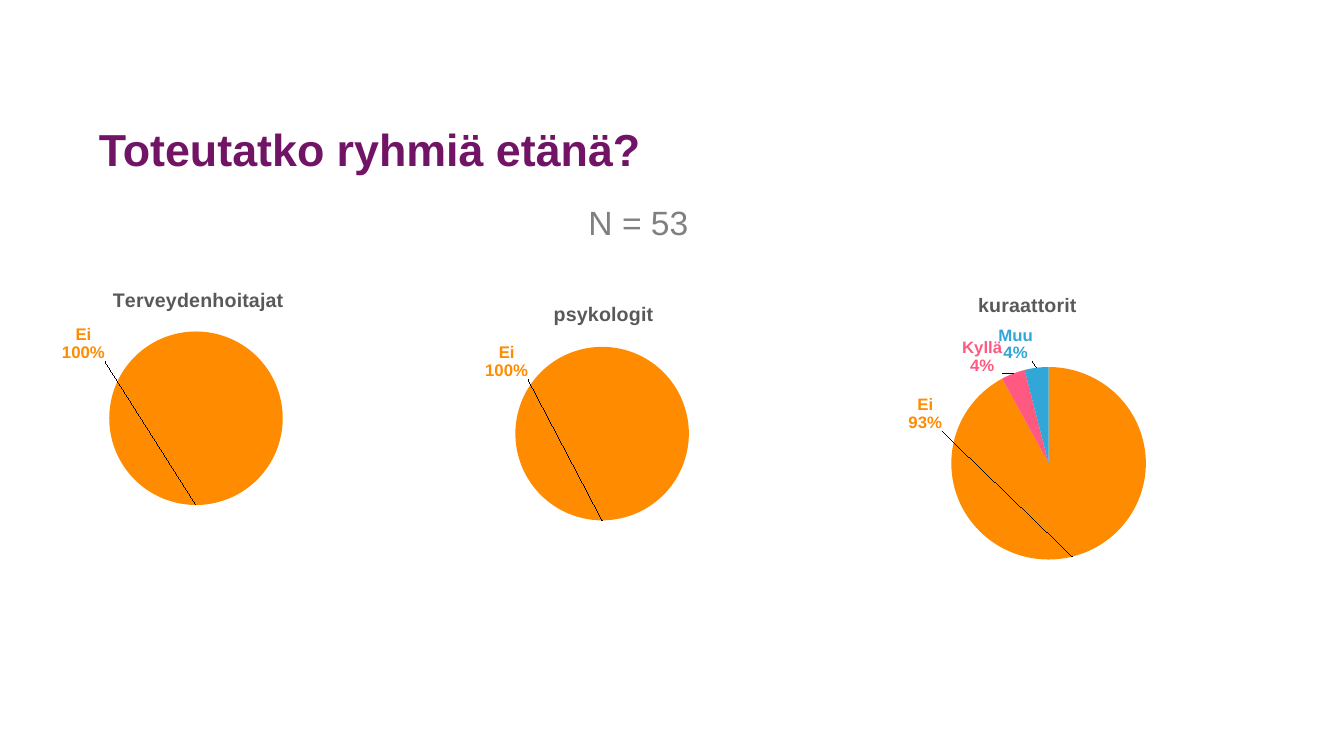
from lxml.etree import SubElement
from pptx import Presentation
from pptx.chart.data import CategoryChartData as ChartData
from pptx.dml.color import RGBColor
from pptx.enum.chart import XL_CHART_TYPE as ChartType, XL_LABEL_POSITION as LabelPos
from pptx.enum.text import MSO_ANCHOR as Anchor
from pptx.oxml.ns import qn
from pptx.util import Cm, Pt

PLUM = RGBColor(0x72, 0x14, 0x65)
GREY = RGBColor(0x80, 0x80, 0x80)
DARK = RGBColor(0x59, 0x59, 0x59)
BLACK = RGBColor(0, 0, 0)
ORANGE = RGBColor(0xFF, 0x8C, 0x00)
PINK = RGBColor(0xFF, 0x59, 0x82)
BLUE = RGBColor(0x31, 0xA7, 0xD7)

FONT = "Arial"
ANSWERS = {"Ei": ORANGE, "Kyllä": PINK, "Muu": BLUE}
TEXTS = [
    {"text": "Toteutatko ryhmiä etänä?", "box": (2.49, 2.54, 15.19, 2.57),
     "size": 32, "color": PLUM, "bold": True,
     "inset": 0, "anchor": Anchor.MIDDLE, "spacing": 0.9},
    {"text": "N = 53", "box": (14.58, 4.97, 6.2, 1.27),
     "size": 24, "color": GREY, "bold": False,
     "inset": 0.25, "anchor": Anchor.TOP, "spacing": 1},
]
PIES = [
    {"title": "Terveydenhoitajat", "values": (100, 0, 0),
     "box": (0.89, 6.86, 8.1, 7.29), "head": (0.23, 0.04),
     "plot": (0.23, 0.2, 0.54, 0.61),
     "shifts": [(-0.35, -0.64), None, None]},
    {"title": "psykologit", "values": (100, 0, 0),
     "box": (11.53, 7.21, 7.29, 7.29), "head": (0.32, 0.04),
     "plot": (0.2, 0.21, 0.6, 0.6),
     "shifts": [(-0.33, -0.63), None, None]},
    {"title": "kuraattorit", "values": (93, 4, 4),
     "box": (22.73, 7.21, 7.32, 7.85), "head": (0.25, 0.01),
     "plot": (0.17, 0.26, 0.67, 0.63),
     "shifts": [(-0.57, -0.54), (-0.03, 0.02), (-0.01, 0)]},
]


def style(font, size, color, bold):
    font.name = FONT
    font.size = Pt(size)
    font.bold = bold
    font.color.rgb = color


def add_tag(parent, name, value):
    SubElement(parent, qn(f"c:{name}")).set("val", str(value))


def place(parent, index, spot, edge=True, inner=False):
    for old in parent.findall(qn("c:layout")):
        parent.remove(old)
    layout = SubElement(parent, qn("c:layout"))
    manual = SubElement(layout, qn("c:manualLayout"))
    if inner:
        add_tag(manual, "layoutTarget", "inner")
    if edge:
        add_tag(manual, "xMode", "edge")
        add_tag(manual, "yMode", "edge")
    for key, part in zip("xywh", spot):
        add_tag(manual, key, part)
    parent.insert(index, layout)


def add_text(slide, item):
    frame = slide.shapes.add_textbox(*map(Cm, item["box"])).text_frame
    frame.word_wrap = True
    frame.margin_left = frame.margin_right = Cm(item["inset"])
    frame.margin_top = frame.margin_bottom = Cm(item["inset"] / 2)
    frame.vertical_anchor = item["anchor"]
    para = frame.paragraphs[0]
    para.line_spacing = item["spacing"]
    run = para.add_run()
    run.text = item["text"]
    style(run.font, item["size"], item["color"], item["bold"])


def set_title(chart, text, spot):
    title = chart.chart_title
    run = title.text_frame.paragraphs[0].add_run()
    run.text = text
    style(run.font, 14, DARK, True)
    place(title._element, 1, spot)


def set_labels(series):
    labels = series.data_labels
    labels.show_value = labels.show_category_name = True
    labels.number_format = '0"%"'
    labels.number_format_is_linked = False
    labels.position = LabelPos.OUTSIDE_END
    style(labels.font, 12, ORANGE, True)
    return labels


def set_slice(point, color):
    point.format.fill.solid()
    point.format.fill.fore_color.rgb = color
    label = point.data_label
    style(label.font, 12, color, True)
    label.position = LabelPos.OUTSIDE_END


def show_label(node, shift):
    node.find(qn("c:showCatName")).set("val", "1")
    SubElement(node, qn("c:separator")).text = "\n"
    place(node, 1, shift, edge=False)


def hide_label(node):
    for child in list(node)[1:]:
        node.remove(child)
    add_tag(node, "delete", 1)


def add_pie(slide, pie):
    data = ChartData(number_format='0"%"')
    data.categories = list(ANSWERS)
    data.add_series("Series 1", pie["values"])
    box = map(Cm, pie["box"])
    chart = slide.shapes.add_chart(ChartType.PIE, *box, data).chart
    style(chart.font, 10, BLACK, False)
    chart.has_legend = False
    set_title(chart, pie["title"], pie["head"])
    place(chart._chartSpace.chart.plotArea, 0, pie["plot"], inner=True)

    plot = chart.plots[0]
    plot.vary_by_categories = True
    series = plot.series[0]
    labels = set_labels(series)
    for i, color in enumerate(ANSWERS.values()):
        set_slice(series.points[i], color)
    nodes = labels._element.findall(qn("c:dLbl"))
    for node, shift in zip(nodes, pie["shifts"]):
        if shift:
            show_label(node, shift)
        else:
            hide_label(node)


def main():
    deck = Presentation()
    deck.slide_width, deck.slide_height = Cm(33.87), Cm(19.05)
    slide = deck.slides.add_slide(deck.slide_layouts[6])
    for item in TEXTS:
        add_text(slide, item)
    for pie in PIES:
        add_pie(slide, pie)
    deck.save("out.pptx")


if __name__ == "__main__":
    main()
